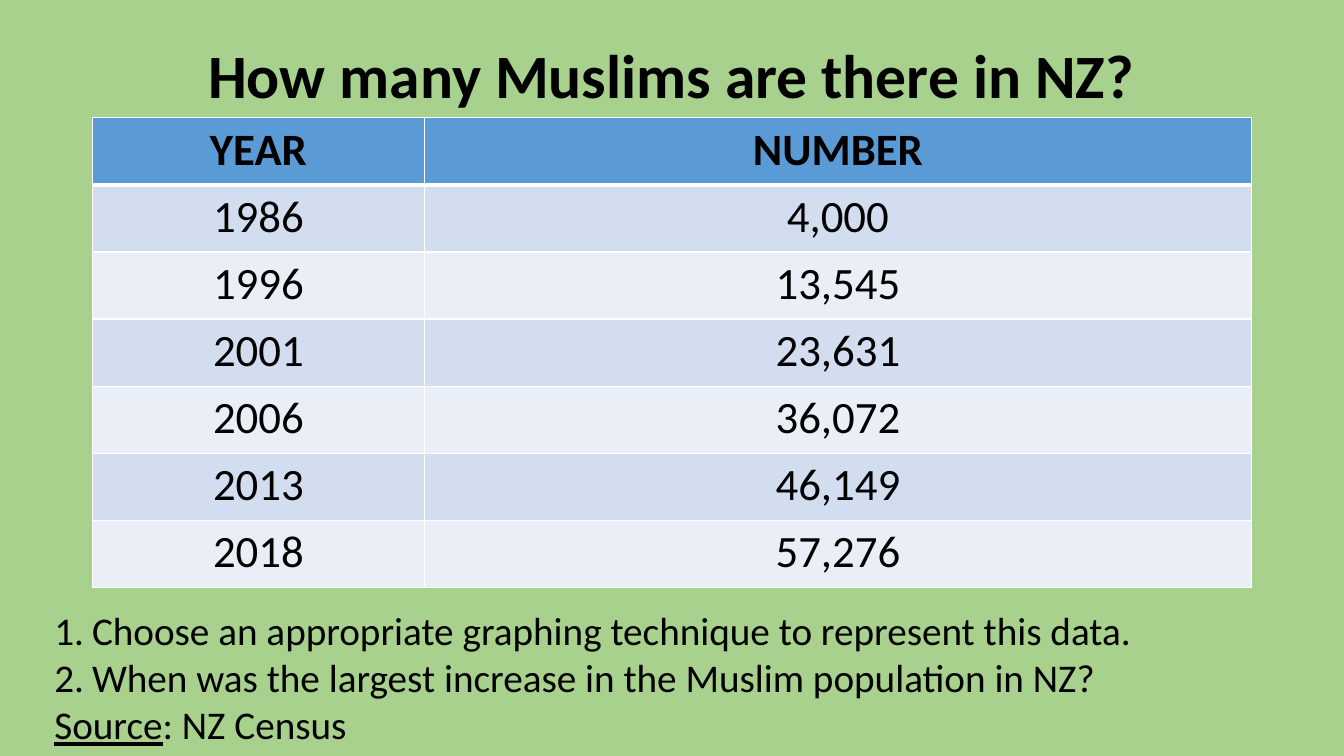
from lxml.etree import SubElement
from pptx import Presentation
from pptx.dml.color import RGBColor
from pptx.enum.text import MSO_ANCHOR, PP_ALIGN
from pptx.oxml.ns import qn
from pptx.util import Cm, Pt

TITLE = "How many Muslims are there in NZ?"
ROWS = [
    ("YEAR", "NUMBER"),
    ("1986", "4,000"),
    ("1996", "13,545"),
    ("2001", "23,631"),
    ("2006", "36,072"),
    ("2013", "46,149"),
    ("2018", "57,276"),
]
QUESTIONS = [
    "Choose an appropriate graphing technique to represent this data.",
    "When was the largest increase in the Muslim population in NZ?",
]
SOURCE = ("Source", ": NZ Census")
COLORS = {
    "background": "A9D18E",
    "header": "5B9BD5",
    "odd": "D2DEEF",
    "even": "EAEFF7",
    "border": "FFFFFF",
    "text": "000000",
}
FONT = "Calibri"
LEFT, WIDTH = 2.33, 29.21
COL_WIDTHS = (8.37, 20.84)
ROW_HEIGHT = 1.69
INDENT = 0.95


def rgb(name):
    """Return the named colour."""
    return RGBColor.from_string(COLORS[name])


def style(p, size, bold=False, align=PP_ALIGN.LEFT):
    """Format a paragraph and its runs."""
    p.alignment = align
    for r in p.runs:
        r.font.name, r.font.size, r.font.bold = FONT, Pt(size), bold
        r.font.color.rgb = rgb("text")


def add_box(s, x, y, w, h):
    """Add a wrapping text box and return its text frame."""
    tf = s.shapes.add_textbox(Cm(x), Cm(y), Cm(w), Cm(h)).text_frame
    tf.word_wrap = True
    tf.vertical_anchor = MSO_ANCHOR.TOP
    return tf


def set_borders(cell, row):
    """Draw thin borders with a thick line under the header."""
    tcPr = cell._tc.get_or_add_tcPr()
    thick = {(0, "lnB"), (1, "lnT")}
    for side in ("lnL", "lnR", "lnT", "lnB"):
        width = Pt(3 if (row, side) in thick else 1)
        ln = SubElement(tcPr, qn(f"a:{side}"), w=str(width))
        fill = SubElement(ln, qn("a:solidFill"))
        SubElement(fill, qn("a:srgbClr"), val=COLORS["border"])


def add_population_table(s):
    """Add the table of population by year."""
    frame = s.shapes.add_table(len(ROWS), len(COL_WIDTHS), Cm(LEFT), Cm(2.97),
                               Cm(WIDTH), Cm(ROW_HEIGHT * len(ROWS)))
    table = frame.table
    for col, width in zip(table.columns, COL_WIDTHS):
        col.width = Cm(width)
    for i, values in enumerate(ROWS):
        table.rows[i].height = Cm(ROW_HEIGHT)
        color = "header" if i == 0 else "odd" if i % 2 else "even"
        for j, value in enumerate(values):
            cell = table.cell(i, j)
            cell.text_frame.text = value
            style(cell.text_frame.paragraphs[0], 32, i == 0, PP_ALIGN.CENTER)
            set_borders(cell, i)
            cell.fill.solid()
            cell.fill.fore_color.rgb = rgb(color)


def add_questions(s):
    """Add the numbered questions and the source line."""
    tf = add_box(s, 1.12, 15.16, 31.78, 3.84)
    tf.text = "\n".join(QUESTIONS + [SOURCE[0]])
    *numbered, source = tf.paragraphs
    for p in numbered:
        pPr = p._p.get_or_add_pPr()
        pPr.set("marL", str(Cm(INDENT)))
        pPr.set("indent", str(-Cm(INDENT)))
        SubElement(pPr, qn("a:buAutoNum"), type="arabicPeriod")
    source.runs[0].font.underline = True
    source.add_run().text = SOURCE[1]
    for p in tf.paragraphs:
        style(p, 28)


def main():
    """Build the slide and save it."""
    prs = Presentation()
    prs.slide_width, prs.slide_height = Cm(33.87), Cm(19.05)
    s = prs.slides.add_slide(prs.slide_layouts[6])
    s.background.fill.solid()
    s.background.fill.fore_color.rgb = rgb("background")
    tf = add_box(s, LEFT, 1.02, WIDTH, 3.68)
    tf.text = TITLE
    style(tf.paragraphs[0], 44, True, PP_ALIGN.CENTER)
    tf.paragraphs[0].line_spacing = 0.9
    add_population_table(s)
    add_questions(s)
    prs.save("out.pptx")


if __name__ == "__main__":
    main()
